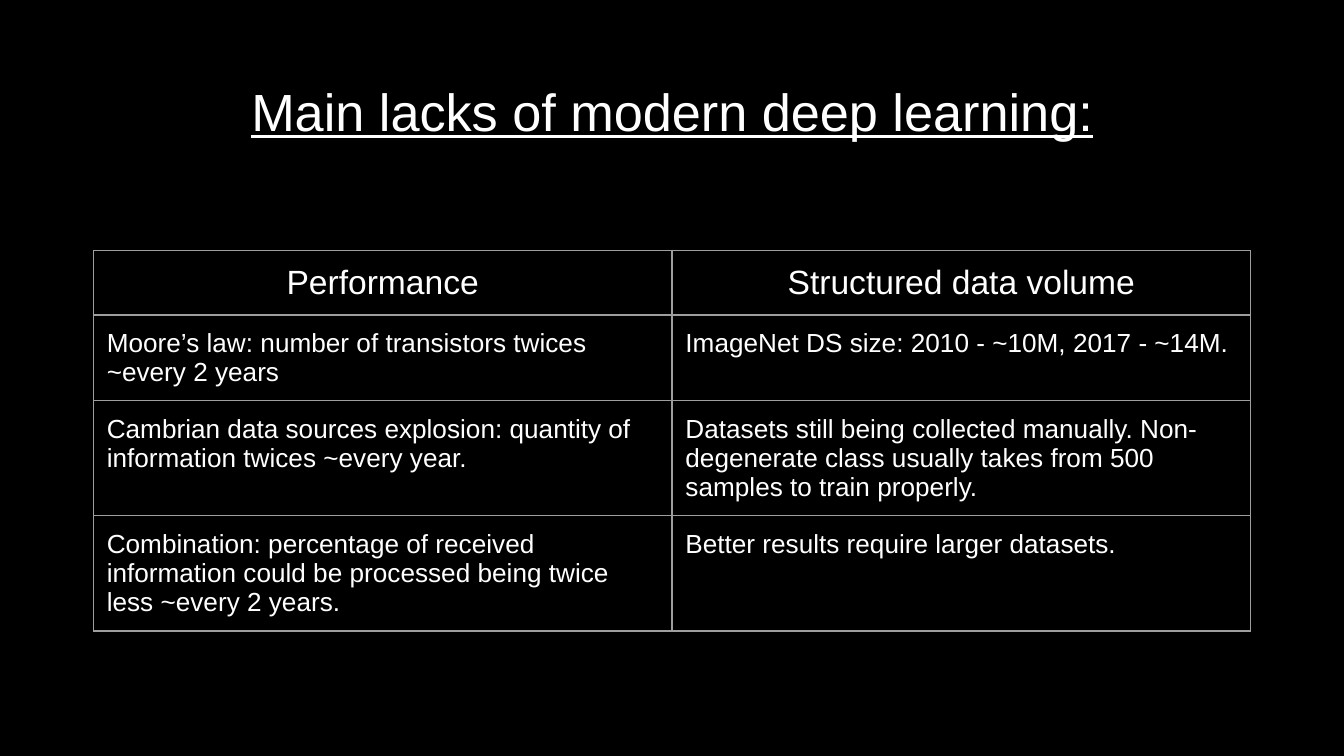
from dataclasses import dataclass

from lxml.etree import SubElement
from pptx import Presentation
from pptx.dml.color import RGBColor
from pptx.enum.text import MSO_ANCHOR, PP_ALIGN
from pptx.oxml.ns import qn
from pptx.slide import Slide
from pptx.table import _Cell as Cell
from pptx.text.text import TextFrame
from pptx.util import Pt


@dataclass(frozen=True)
class Theme:
    font: str = "Arial"
    background: str = "000000"
    text: str = "FFFFFF"
    border: str = "9E9E9E"
    border_width: float = 0.75
    title_size: float = 28
    header_size: float = 18
    body_size: float = 14
    inset: float = 7.2


@dataclass(frozen=True)
class Row:
    performance: str
    data_volume: str
    height: float


THEME = Theme()
SLIDE_WIDTH, SLIDE_HEIGHT = 720, 405
TABLE_LEFT, TABLE_TOP, COLUMN_WIDTH = 50, 134, 310
ROWS = [
    Row("Performance", "Structured data volume", 34.8),
    Row(
        "Moore’s law: number of transistors twices ~every 2 years",
        "ImageNet DS size: 2010 - ~10M, 2017 - ~14M.",
        46,
    ),
    Row(
        "Cambrian data sources explosion: quantity of information twices ~every year.",
        "Datasets still being collected manually. Non-degenerate class usually takes "
        "from 500 samples to train properly.",
        61.5,
    ),
    Row(
        "Combination: percentage of received information could be processed being "
        "twice less ~every 2 years.",
        "Better results require larger datasets.",
        61.5,
    ),
]


def write_text(
    frame: TextFrame, text: str, size: float, alignment: PP_ALIGN, underline: bool = False
) -> None:
    frame.text = text
    paragraph = frame.paragraphs[0]
    paragraph.alignment = alignment
    font = paragraph.runs[0].font
    font.name = THEME.font
    font.size = Pt(size)
    font.bold = False
    font.underline = underline
    font.color.rgb = RGBColor.from_string(THEME.text)


def set_insets(target: Cell | TextFrame) -> None:
    for side in ("left", "top", "right", "bottom"):
        setattr(target, f"margin_{side}", Pt(THEME.inset))


def draw_borders(cell: Cell) -> None:
    properties = cell._tc.get_or_add_tcPr()
    for side in ("lnL", "lnR", "lnT", "lnB"):
        line = SubElement(properties, qn(f"a:{side}"), w=str(Pt(THEME.border_width)))
        fill = SubElement(line, qn("a:solidFill"))
        SubElement(fill, qn("a:srgbClr"), val=THEME.border)


def add_title(slide: Slide, text: str) -> None:
    title = slide.shapes.title
    title.left, title.top = Pt(24.5), Pt(35)
    title.width, title.height = Pt(671), Pt(45.4)
    frame = title.text_frame
    frame.word_wrap = True
    frame.vertical_anchor = MSO_ANCHOR.TOP
    set_insets(frame)
    write_text(frame, text, THEME.title_size, PP_ALIGN.CENTER, underline=True)


def add_comparison_table(slide: Slide, rows: list[Row]) -> None:
    table = slide.shapes.add_table(
        len(rows), 2, Pt(TABLE_LEFT), Pt(TABLE_TOP),
        Pt(2 * COLUMN_WIDTH), Pt(sum(row.height for row in rows)),
    ).table
    table.horz_banding = False
    for column in table.columns:
        column.width = Pt(COLUMN_WIDTH)
    for row_index, row in enumerate(rows):
        table.rows[row_index].height = Pt(row.height)
        is_header = row_index == 0
        size = THEME.header_size if is_header else THEME.body_size
        alignment = PP_ALIGN.CENTER if is_header else PP_ALIGN.LEFT
        for column_index, text in enumerate((row.performance, row.data_volume)):
            cell = table.cell(row_index, column_index)
            set_insets(cell)
            draw_borders(cell)
            cell.fill.solid()
            cell.fill.fore_color.rgb = RGBColor.from_string(THEME.background)
            write_text(cell.text_frame, text, size, alignment)


def main() -> None:
    presentation = Presentation()
    presentation.slide_width = Pt(SLIDE_WIDTH)
    presentation.slide_height = Pt(SLIDE_HEIGHT)
    slide = presentation.slides.add_slide(presentation.slide_layouts.get_by_name("Title Only"))
    background = slide.background.fill
    background.solid()
    background.fore_color.rgb = RGBColor.from_string(THEME.background)
    add_comparison_table(slide, ROWS)
    add_title(slide, "Main lacks of modern deep learning:")
    presentation.save("out.pptx")


if __name__ == "__main__":
    main()
